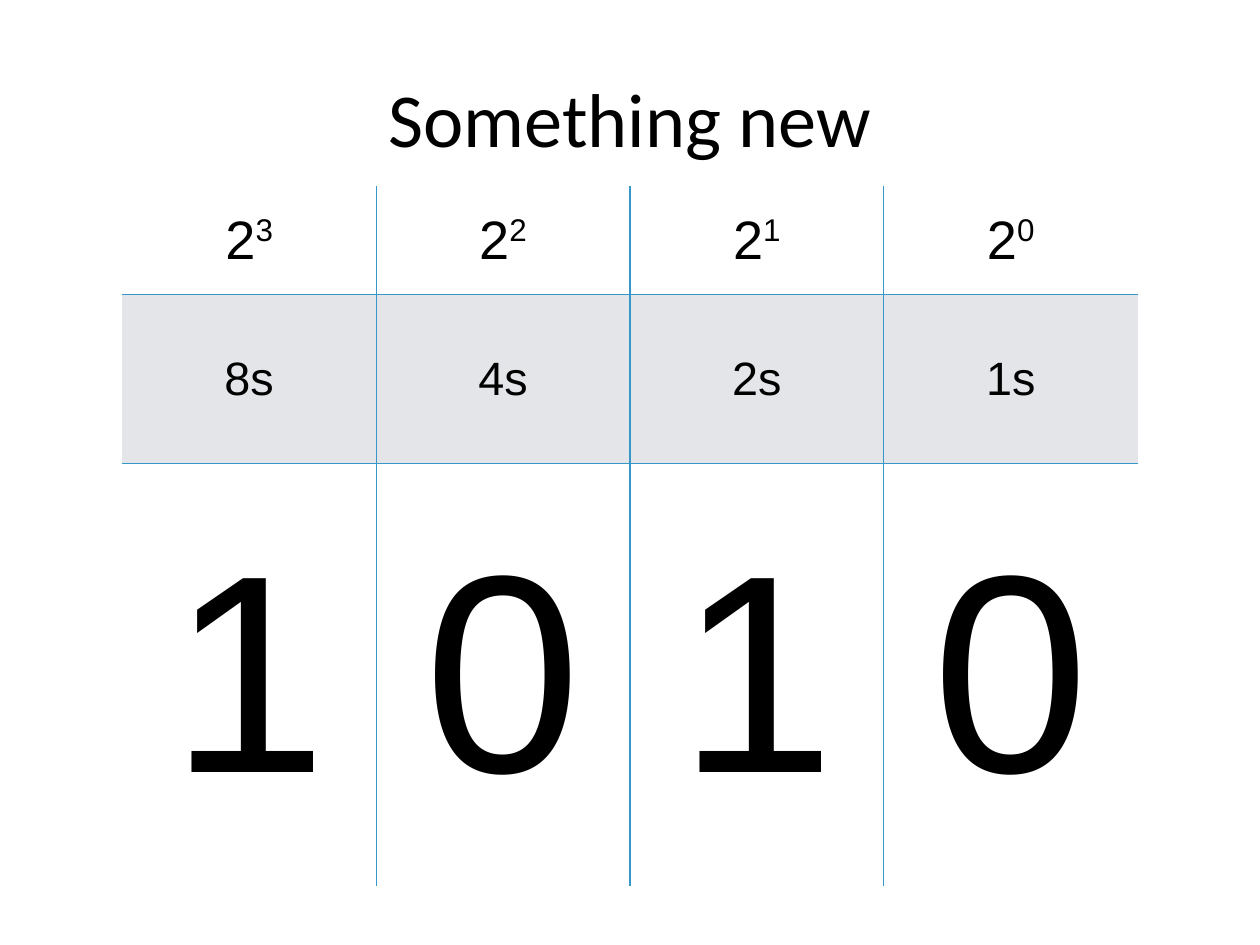
import dataclasses

import lxml.etree
import pptx
import pptx.dml.color
import pptx.enum.text
import pptx.oxml.ns
import pptx.util

Inches = pptx.util.Inches


@dataclasses.dataclass(frozen=True)
class Theme:
    ink: str = "000000"
    line: str = "3797C6"
    band: str = "E3E5E8"
    paper: str = "FFFFFF"
    head: str = "Calibri"
    body: str = "Arial"
    title: int = 62
    power: int = 44
    place: int = 38
    digit: int = 229
    rule: int = 1


THEME = Theme()


def color(code):
    return pptx.dml.color.RGBColor.from_string(code)


def write(frame, text, size, font=THEME.body, sup="", pad=0.06):
    frame.word_wrap = True
    frame.vertical_anchor = pptx.enum.text.MSO_ANCHOR.MIDDLE
    frame.margin_left = frame.margin_right = Inches(pad)
    frame.margin_top = frame.margin_bottom = Inches(pad)
    para = frame.paragraphs[0]
    para.alignment = pptx.enum.text.PP_ALIGN.CENTER
    for part, base in ((text, 0), (sup, 32000)):
        if not part:
            continue
        run = para.add_run()
        run.text = part
        run.font.size = pptx.util.Pt(size)
        run.font.name = font
        run.font.color.rgb = color(THEME.ink)
        if base:
            run._r.get_or_add_rPr().set("baseline", str(base))


def edge(cell, sides):
    qn = pptx.oxml.ns.qn
    props = cell._tc.get_or_add_tcPr()
    for spot, (side, shown) in enumerate(sides.items()):
        line = lxml.etree.Element(qn("a:ln" + side))
        props.insert(spot, line)
        if shown:
            line.set("w", str(pptx.util.Pt(THEME.rule)))
            fill = lxml.etree.SubElement(line, qn("a:solidFill"))
            lxml.etree.SubElement(fill, qn("a:srgbClr"), val=THEME.line)
        else:
            lxml.etree.SubElement(line, qn("a:noFill"))


def title(slide, box, text):
    shape = slide.shapes.add_textbox(*map(Inches, box))
    write(shape.text_frame, text, THEME.title, font=THEME.head, pad=0.07)


def grid(slide, box, bits):
    left, top, width, height = box
    count = len(bits)
    powers = range(count - 1, -1, -1)
    rows = (
        (1.23, THEME.power, THEME.paper, [("2", str(n)) for n in powers]),
        (1.9, THEME.place, THEME.band, [(f"{2 ** n}s", "") for n in powers]),
        (height - 3.13, THEME.digit, THEME.paper, [(bit, "") for bit in bits]),
    )
    table = slide.shapes.add_table(len(rows), count, *map(Inches, box)).table
    table.first_row = table.horz_banding = False
    for col in table.columns:
        col.width = Inches(width / count)
    for r, (tall, size, fill, items) in enumerate(rows):
        table.rows[r].height = Inches(tall)
        for c, (text, sup) in enumerate(items):
            cell = table.cell(r, c)
            cell.fill.solid()
            cell.fill.fore_color.rgb = color(fill)
            write(cell.text_frame, text, size, sup=sup)
            cell.vertical_anchor = pptx.enum.text.MSO_ANCHOR.MIDDLE
            cell.margin_left = cell.margin_right = Inches(0.06)
            cell.margin_top = cell.margin_bottom = Inches(0.06)
            edge(cell, {"L": c > 0, "R": c < count - 1,
                        "T": r > 0, "B": r < len(rows) - 1})


def main():
    deck = pptx.Presentation()
    deck.slide_width = Inches(14.22)
    deck.slide_height = Inches(10.67)
    slide = deck.slides.add_slide(deck.slide_layouts[6])
    title(slide, (0.71, 0.43, 12.8, 1.78), "Something new")
    grid(slide, (1.38, 2.1, 11.46, 7.9), "1010")
    deck.save("out.pptx")


if __name__ == "__main__":
    main()
